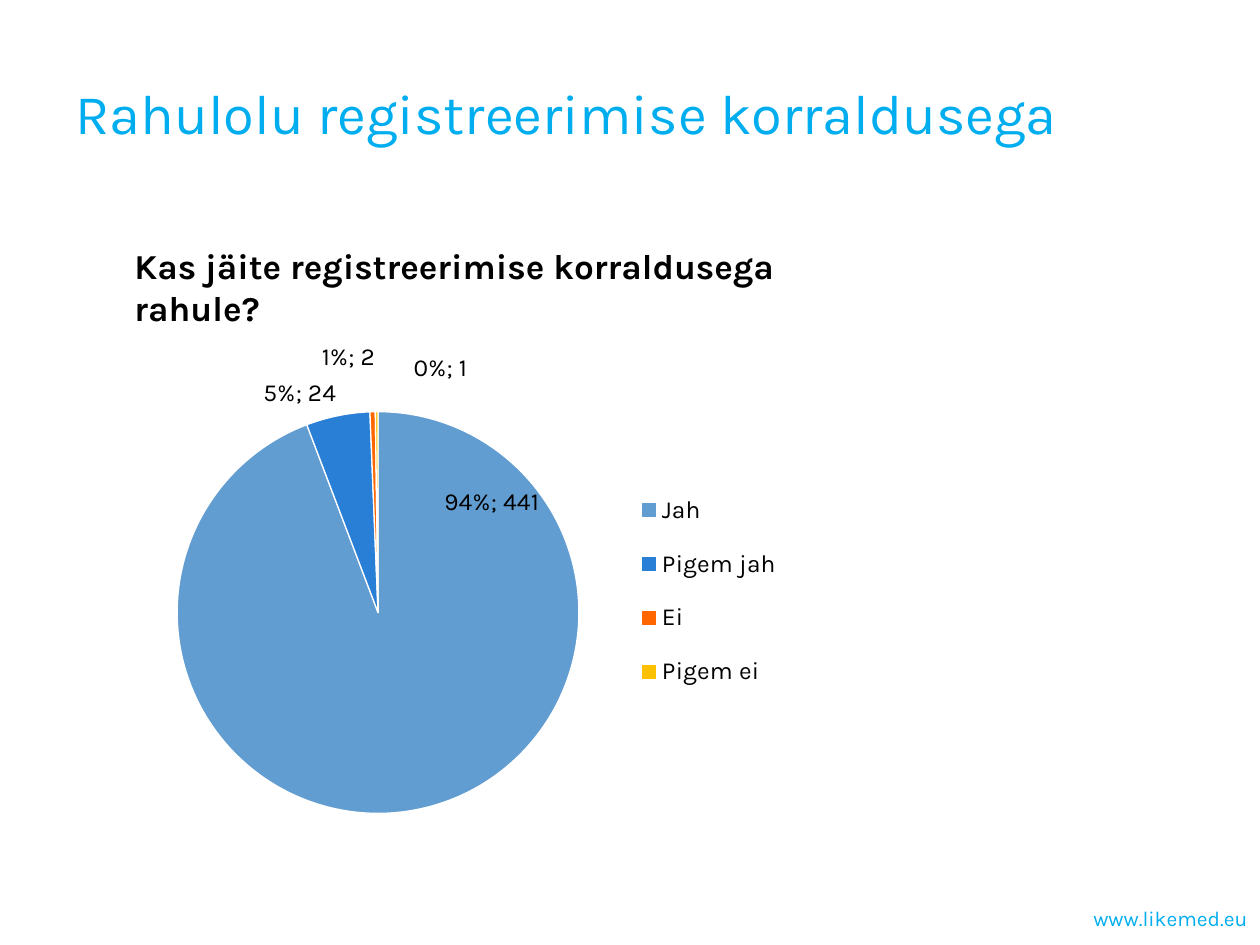
from dataclasses import dataclass

from pptx import Presentation
from pptx.chart.data import CategoryChartData
from pptx.dml.color import RGBColor
from pptx.enum.chart import XL_CHART_TYPE, XL_LABEL_POSITION, XL_LEGEND_POSITION
from pptx.enum.text import MSO_ANCHOR, PP_ALIGN
from pptx.oxml import parse_xml
from pptx.oxml.ns import nsdecls, qn
from pptx.util import Cm, Pt


@dataclass(frozen=True)
class Theme:
    font: str = "Karla"
    accent: str = "00AEEF"
    text: str = "000000"
    white: str = "FFFFFF"
    title_pt: int = 32
    question_pt: int = 20
    chart_pt: int = 14
    footer_pt: int = 12


@dataclass(frozen=True)
class TextItem:
    text: str
    box: tuple[float, float, float, float]  # left, top, width, height in cm
    size: int
    color: str
    bold: bool = False
    align: PP_ALIGN = PP_ALIGN.LEFT
    anchor: MSO_ANCHOR = MSO_ANCHOR.MIDDLE


@dataclass(frozen=True)
class Answer:
    name: str
    count: int
    label: str
    color: str
    position: XL_LABEL_POSITION
    offset: tuple[float, float]  # label shift as a share of the chart size


THEME = Theme()
CENTER, OUTSIDE = XL_LABEL_POSITION.CENTER, XL_LABEL_POSITION.OUTSIDE_END

TEXTS = [
    TextItem("Rahulolu registreerimise korraldusega", (1.27, 0.22, 22.86, 4.09),
             THEME.title_pt, THEME.accent),
    TextItem("www.likemed.eu", (17.35, 18, 8.05, 1.02),
             THEME.footer_pt, THEME.accent, align=PP_ALIGN.RIGHT),
    TextItem("Kas jäite registreerimise korraldusega rahule?", (2.46, 4.8, 14.91, 1.88),
             THEME.question_pt, THEME.text, bold=True, anchor=MSO_ANCHOR.TOP),
]
ANSWERS = [
    Answer("Jah", 441, "94%; 441", "629DD1", CENTER, (0.12, -0.39)),
    Answer("Pigem jah", 24, "5%; 24", "297FD5", OUTSIDE, (0, 0)),
    Answer("Ei", 2, "1%; 2", "FF6600", OUTSIDE, (-0.03, -0.06)),
    Answer("Pigem ei", 1, "0%; 1", "FFC000", OUTSIDE, (0.08, -0.04)),
]
CHART_BOX = (1.27, 6.68, 16.08, 10.8)


def set_font(font, size: int, color: str, bold: bool = False) -> None:
    font.name = THEME.font
    font.size = Pt(size)
    font.bold = bold
    font.color.rgb = RGBColor.from_string(color)


def add_text(s, item: TextItem) -> None:
    tf = s.shapes.add_textbox(*map(Cm, item.box)).text_frame
    tf.word_wrap = True
    tf.vertical_anchor = item.anchor
    p = tf.paragraphs[0]
    p.alignment = item.align
    r = p.add_run()
    r.text = item.text
    set_font(r.font, item.size, item.color, item.bold)


def set_layout(element, index: int, modes: str = "", **shares: float) -> None:
    """Give a chart element a manual layout, as its child number index."""
    for old in element.findall(qn("c:layout")):
        element.remove(old)
    sizes = "".join(f'<c:{key} val="{value}"/>' for key, value in shares.items())
    element.insert(index, parse_xml(
        f'<c:layout {nsdecls("c")}><c:manualLayout>{modes}{sizes}'
        "</c:manualLayout></c:layout>"))


def hide_leader_lines(labels) -> None:
    for old in labels.findall(qn("c:showLeaderLines")):
        labels.remove(old)
    labels.append(parse_xml(f'<c:showLeaderLines {nsdecls("c")} val="0"/>'))


def add_pie(s, answers: list[Answer]) -> None:
    data = CategoryChartData()
    data.categories = [a.name for a in answers]
    data.add_series("Series 1", [a.count for a in answers])
    chart = s.shapes.add_chart(XL_CHART_TYPE.PIE, *map(Cm, CHART_BOX), data).chart
    set_font(chart.font, THEME.chart_pt, THEME.text)
    chart.has_title = False

    plot = chart.plots[0]
    plot.vary_by_categories = True
    series = plot.series[0]
    labels = series.data_labels
    labels.show_percentage = True
    labels.show_value = False
    set_font(labels.font, THEME.chart_pt, THEME.text)
    for i, a in enumerate(answers):
        point = series.points[i]
        point.format.fill.solid()
        point.format.fill.fore_color.rgb = RGBColor.from_string(a.color)
        point.format.line.color.rgb = RGBColor.from_string(THEME.white)
        point.format.line.width = Pt(0.75)
        r = point.data_label.text_frame.paragraphs[0].add_run()
        r.text = a.label
        set_font(r.font, THEME.chart_pt, THEME.text)
        point.data_label.position = a.position
    for label, a in zip(series._element.findall(".//" + qn("c:dLbl")), answers):
        set_layout(label, 1, x=a.offset[0], y=a.offset[1])
    hide_leader_lines(labels._element)

    chart.has_legend = True
    legend = chart.legend
    legend.position = XL_LEGEND_POSITION.RIGHT
    legend.include_in_layout = False
    set_font(legend.font, THEME.chart_pt, THEME.text)
    edges = '<c:xMode val="edge"/><c:yMode val="edge"/>'
    set_layout(legend._element, 1, edges, x=0.71, y=0.26, w=0.2, h=0.45)
    set_layout(plot._element.getparent(), 0, '<c:layoutTarget val="inner"/>' + edges,
               x=0.14, y=0.15, w=0.51, h=0.75)


def main() -> None:
    prs = Presentation()
    prs.slide_width, prs.slide_height = Cm(25.4), Cm(19.05)
    s = prs.slides.add_slide(prs.slide_layouts[6])
    s.background.fill.solid()
    s.background.fill.fore_color.rgb = RGBColor.from_string(THEME.white)
    add_pie(s, ANSWERS)
    for item in TEXTS:
        add_text(s, item)
    prs.save("out.pptx")


if __name__ == "__main__":
    main()
